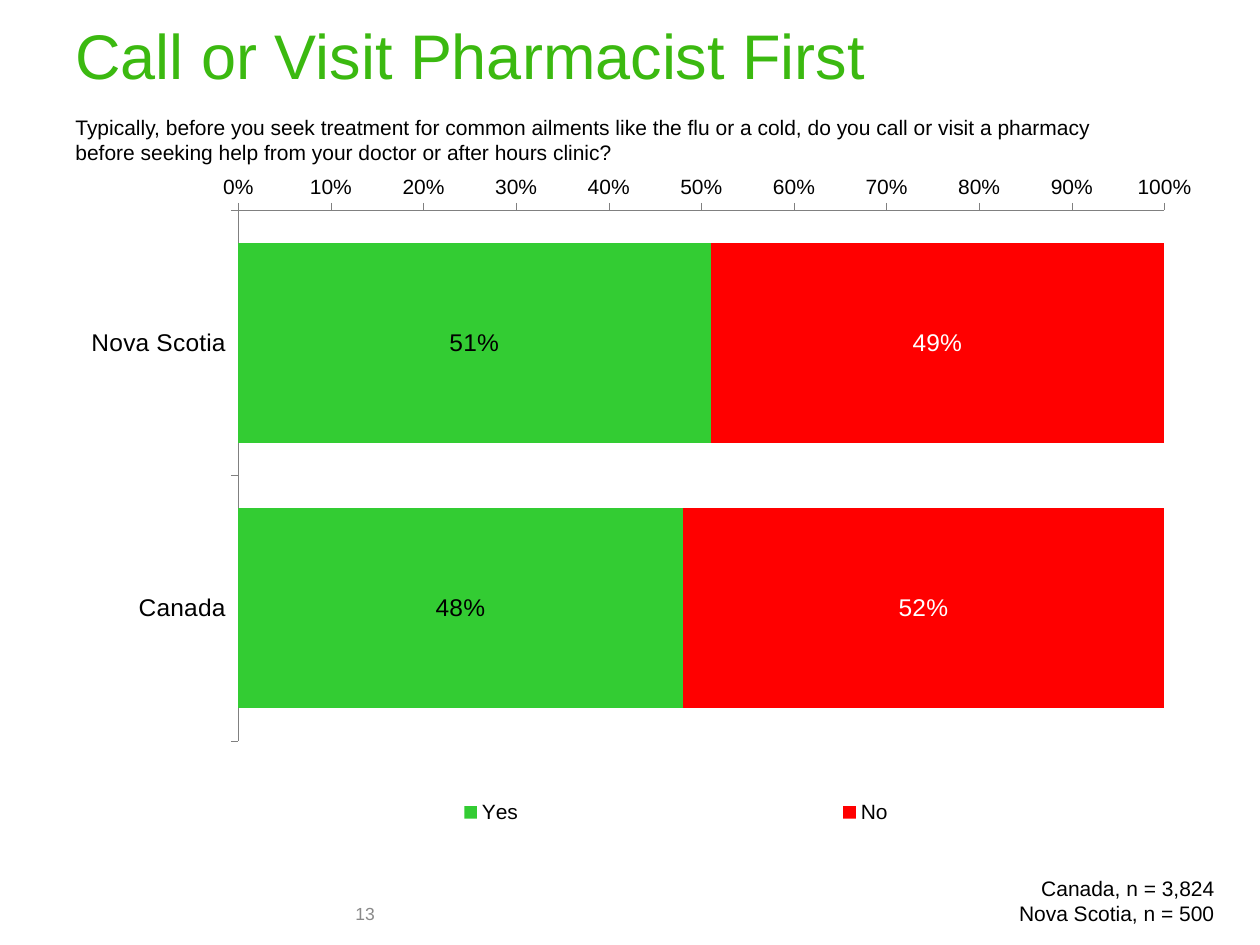
from dataclasses import dataclass

from lxml import etree
from pptx import Presentation
from pptx.chart.data import CategoryChartData
from pptx.dml.color import RGBColor
from pptx.enum.chart import (XL_AXIS_CROSSES, XL_CHART_TYPE, XL_LABEL_POSITION,
                             XL_LEGEND_POSITION, XL_TICK_MARK)
from pptx.enum.text import MSO_ANCHOR, PP_ALIGN
from pptx.oxml.ns import qn
from pptx.util import Emu, Pt

PX_PER_INCH = 126


@dataclass(frozen=True)
class Theme:
    font: str = "Arial"
    text: str = "000000"
    title: str = "3BB910"
    page_number: str = "898989"
    axis: str = "808080"
    yes: str = "33CC33"
    no: str = "FF0000"
    no_label: str = "FFFFFF"
    title_size: int = 36
    label_size: int = 14
    body_size: int = 12
    page_number_size: int = 10


THEME = Theme()


def px(length):
    return Emu(round(length * 914400 / PX_PER_INCH))


def set_font(font, size, color):
    font.name = THEME.font
    font.size = Pt(size)
    font.color.rgb = RGBColor.from_string(color)


def add_text(slide, box, lines, size, color=THEME.text,
             align=PP_ALIGN.LEFT, anchor=MSO_ANCHOR.TOP):
    frame = slide.shapes.add_textbox(*map(px, box)).text_frame
    frame.word_wrap = True
    frame.vertical_anchor = anchor
    frame.text = "\n".join(lines)
    for paragraph in frame.paragraphs:
        paragraph.alignment = align
        set_font(paragraph.font, size, color)


def set_layout(element, x, y, w, h, inner=False):
    """Place a plot area or legend by fractions of the chart's size."""
    for stale in element.findall(qn("c:layout")):
        element.remove(stale)
    layout = etree.Element(qn("c:layout"))
    manual = etree.SubElement(layout, qn("c:manualLayout"))
    settings = [("layoutTarget", "inner")] if inner else []
    settings += [("xMode", "edge"), ("yMode", "edge"),
                 ("x", x), ("y", y), ("w", w), ("h", h)]
    for tag, value in settings:
        etree.SubElement(manual, qn(f"c:{tag}")).set("val", str(value))
    legend_position = element.find(qn("c:legendPos"))
    if legend_position is None:
        element.insert(0, layout)
    else:
        legend_position.addnext(layout)


def style_axis(axis, size):
    axis.has_major_gridlines = False
    axis.major_tick_mark = XL_TICK_MARK.OUTSIDE
    axis.minor_tick_mark = XL_TICK_MARK.NONE
    axis.format.line.color.rgb = RGBColor.from_string(THEME.axis)
    axis.format.line.width = Pt(0.25)
    set_font(axis.tick_labels.font, size, THEME.text)


def style_series(series, fill, label_color):
    series.format.fill.solid()
    series.format.fill.fore_color.rgb = RGBColor.from_string(fill)
    series.invert_if_negative = False
    labels = series.data_labels
    labels.show_value = True
    labels.position = XL_LABEL_POSITION.CENTER
    labels.number_format = "0%"
    labels.number_format_is_linked = False
    set_font(labels.font, THEME.label_size, label_color)


def add_answer_chart(slide, box):
    answers = CategoryChartData(number_format="0%")
    answers.categories = ["Nova Scotia", "Canada"]
    answers.add_series("Yes", [0.51, 0.48])
    answers.add_series("No", [0.49, 0.52])
    chart = slide.shapes.add_chart(
        XL_CHART_TYPE.BAR_STACKED_100, *map(px, box), answers).chart
    chart.has_title = False
    set_font(chart.font, THEME.body_size, THEME.text)

    plot = chart.plots[0]
    plot.gap_width = 33
    plot.overlap = 100
    plot.vary_by_categories = False
    style_series(plot.series[0], THEME.yes, THEME.text)
    style_series(plot.series[1], THEME.no, THEME.no_label)

    regions, shares = chart.category_axis, chart.value_axis
    style_axis(regions, THEME.label_size)
    style_axis(shares, THEME.body_size)
    regions.reverse_order = True
    regions.crosses = XL_AXIS_CROSSES.MAXIMUM
    shares.minimum_scale = 0
    shares.maximum_scale = 1
    shares.major_unit = 0.1
    shares.tick_labels.number_format = "0%"
    shares.tick_labels.number_format_is_linked = False

    chart.has_legend = True
    legend = chart.legend
    legend.position = XL_LEGEND_POSITION.RIGHT
    legend.include_in_layout = True
    set_font(legend.font, THEME.body_size, THEME.text)
    plot_area = chart.element.find(f".//{qn('c:plotArea')}")
    set_layout(plot_area, 0.16, 0.037, 0.804, 0.8, inner=True)
    set_layout(chart.element.find(f".//{qn('c:legend')}"),
               0.08, 0.91, 0.92, 0.07)


def main():
    deck = Presentation()
    deck.slide_width, deck.slide_height = px(1260), px(945)
    slide = deck.slides.add_slide(deck.slide_layouts[6])
    add_text(slide, (343, 900, 294, 28), ["13"], THEME.page_number_size,
             THEME.page_number, anchor=MSO_ANCHOR.MIDDLE)
    add_text(slide, (561, 869, 666, 63),
             ["Canada, n = 3,824", "Nova Scotia, n = 500"],
             THEME.body_size, align=PP_ALIGN.RIGHT)
    add_text(slide, (63, 1, 1134, 107), ["Call or Visit Pharmacist First"],
             THEME.title_size, THEME.title, anchor=MSO_ANCHOR.MIDDLE)
    add_text(slide, (63, 108, 1101, 63),
             ["Typically, before you seek treatment for common ailments like "
              "the flu or a cold, do you call or visit a pharmacy before "
              "seeking help from your doctor or after hours clinic?"],
             THEME.body_size)
    add_answer_chart(slide, (54, 176, 1152, 673))
    deck.save("out.pptx")


if __name__ == "__main__":
    main()
